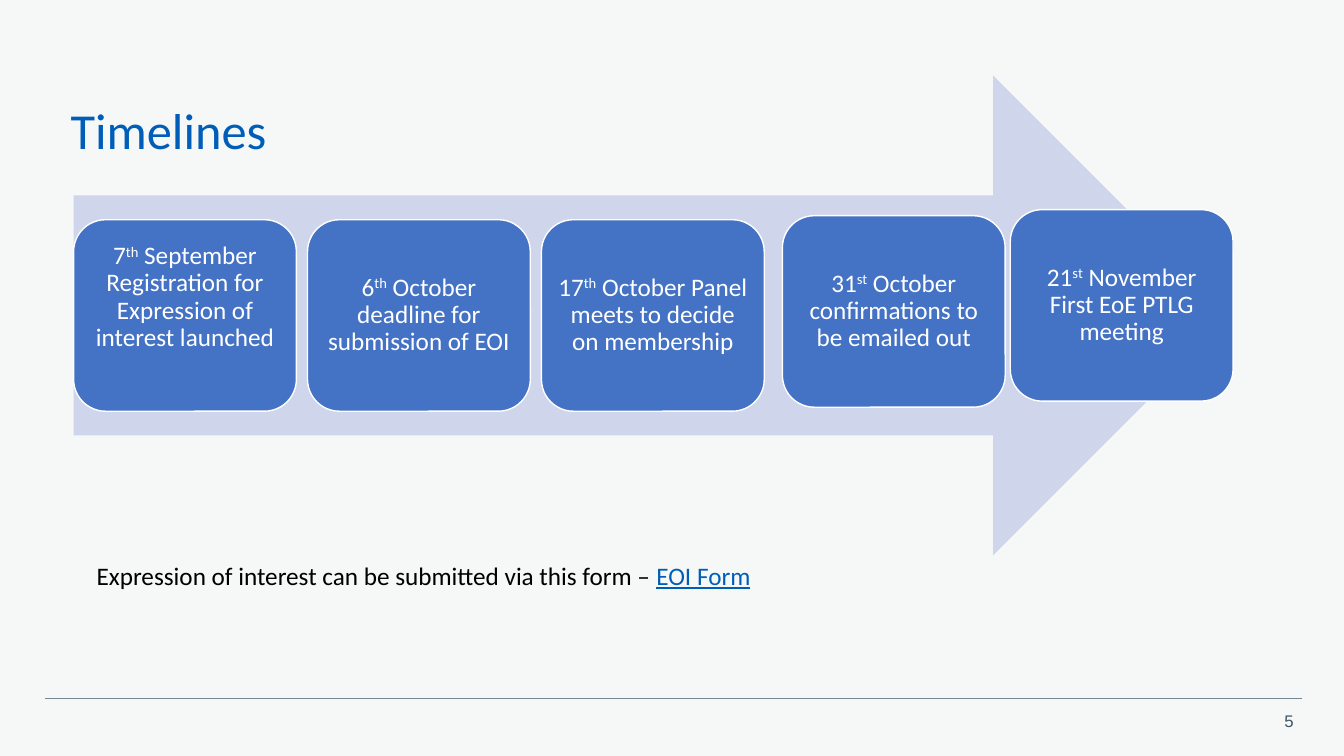
from lxml.etree import SubElement
from pptx import Presentation
from pptx.dml.color import RGBColor
from pptx.enum.shapes import MSO_CONNECTOR, MSO_SHAPE
from pptx.enum.text import MSO_ANCHOR, MSO_AUTO_SIZE, PP_ALIGN
from pptx.oxml.ns import qn
from pptx.util import Inches, Pt

TITLE = "Timelines"
# day, ordinal ending, rest of the text, left shift, top shift, extra room below
MILESTONES = [
    ("7", "th", " September Registration for Expression of interest launched", 0, 0, 0.36),
    ("6", "th", " October deadline for submission of EOI", 0, 0, 0),
    ("17", "th", " October Panel meets to decide on membership", 0, 0, 0),
    ("31", "st", " October confirmations to be emailed out", 0.07, -0.04, 0),
    ("21", "st", " November First EoE PTLG meeting", 0.01, -0.1, 0),
]
FORM_NOTE = "Expression of interest can be submitted via this form – "
FORM_LINK = "EOI Form"
PAGE = "5"

PAPER = RGBColor(0xF6, 0xF8, 0xF8)
ARROW = RGBColor(0xCF, 0xD5, 0xEA)
CARD = RGBColor(0x44, 0x72, 0xC4)
WHITE = RGBColor(0xFF, 0xFF, 0xFF)
BLACK = RGBColor(0, 0, 0)
BLUE = RGBColor(0x00, 0x5E, 0xB8)
RULE = RGBColor(0x76, 0x86, 0x92)
SLATE = RGBColor(0x42, 0x55, 0x63)

ARROW_LEFT, ARROW_TOP, ARROW_WIDTH, ARROW_HEIGHT = 0.73, 0.75, 11.5, 4.76
CARD_WIDTH, CARD_HEIGHT, CARD_PITCH = 2.21, 1.9, 2.32
CARD_INSET = 0.07


def inches(*lengths):
    return [Inches(length) for length in lengths]


def set_font(font, color, size=18, name="Calibri", **more):
    font.color.rgb = color
    for key, value in {"size": Pt(size), "name": name, **more}.items():
        setattr(font, key, value)


def add_run(paragraph, text, color, **more):
    run = paragraph.add_run()
    run.text = text
    set_font(run.font, color, **more)
    return run


def add_panel(slide, preset, box, fill):
    panel = slide.shapes.add_shape(preset, *inches(*box))
    panel.shadow.inherit = False
    panel.fill.solid()
    panel.fill.fore_color.rgb = fill
    panel.line.fill.background()
    return panel


def add_milestone(slide, column, milestone):
    day, ending, rest, shift_x, shift_y, room_below = milestone
    left = ARROW_LEFT + column * CARD_PITCH + shift_x
    top = ARROW_TOP + (ARROW_HEIGHT - CARD_HEIGHT) / 2 + shift_y
    card = add_panel(slide, MSO_SHAPE.ROUNDED_RECTANGLE,
                     (left, top, CARD_WIDTH, CARD_HEIGHT), CARD)
    card.line.color.rgb = WHITE
    card.line.width = Pt(1)
    frame = card.text_frame
    frame.word_wrap = True
    frame.vertical_anchor = MSO_ANCHOR.MIDDLE
    for side in ("left", "top", "right"):
        setattr(frame, f"margin_{side}", Inches(CARD_INSET))
    frame.margin_bottom = Inches(CARD_INSET + room_below)
    paragraph = frame.paragraphs[0]
    paragraph.alignment = PP_ALIGN.CENTER
    paragraph.line_spacing = 0.9
    add_run(paragraph, day, WHITE)
    ordinal = add_run(paragraph, ending, WHITE)
    ordinal._r.get_or_add_rPr().set("baseline", "30000")
    add_run(paragraph, rest, WHITE)


def add_title(slide):
    title = slide.shapes.title
    title.left, title.top, title.width, title.height = inches(0.6, 0.93, 8.49, 1.01)
    frame = title.text_frame
    frame.auto_size = MSO_AUTO_SIZE.NONE
    frame.vertical_anchor = MSO_ANCHOR.TOP
    paragraph = frame.paragraphs[0]
    paragraph.alignment = PP_ALIGN.LEFT
    add_run(paragraph, TITLE, BLUE, size=36)


def add_form_note(slide):
    note = slide.shapes.add_textbox(*inches(0.86, 5.51, 8.49, 0.71))
    note.text_frame.word_wrap = True
    paragraph = note.text_frame.paragraphs[0]
    add_run(paragraph, FORM_NOTE, BLACK)
    add_run(paragraph, FORM_LINK, BLUE, underline=True)


def add_footer(slide):
    rule = slide.shapes.add_connector(MSO_CONNECTOR.STRAIGHT,
                                      *inches(0.45, 6.93, 12.91, 6.93))
    rule.line.color.rgb = RULE
    rule.line.width = Pt(0.5)
    SubElement(rule._element.spPr, qn("a:effectLst"))

    number = slide.shapes.add_textbox(*inches(12.52, 7, 0.41, 0.3))
    number.text_frame.word_wrap = True
    paragraph = number.text_frame.paragraphs[0]
    paragraph.alignment = PP_ALIGN.RIGHT
    add_run(paragraph, PAGE, SLATE, size=12, name="Arial")


def main():
    deck = Presentation()
    deck.slide_width, deck.slide_height = inches(13.33, 7.5)
    slide = deck.slides.add_slide(deck.slide_layouts[5])
    slide.background.fill.solid()
    slide.background.fill.fore_color.rgb = PAPER

    add_footer(slide)
    add_panel(slide, MSO_SHAPE.RIGHT_ARROW,
              (ARROW_LEFT, ARROW_TOP, ARROW_WIDTH, ARROW_HEIGHT), ARROW)
    for column, milestone in enumerate(MILESTONES):
        add_milestone(slide, column, milestone)
    add_form_note(slide)
    add_title(slide)
    deck.save("out.pptx")


if __name__ == "__main__":
    main()
